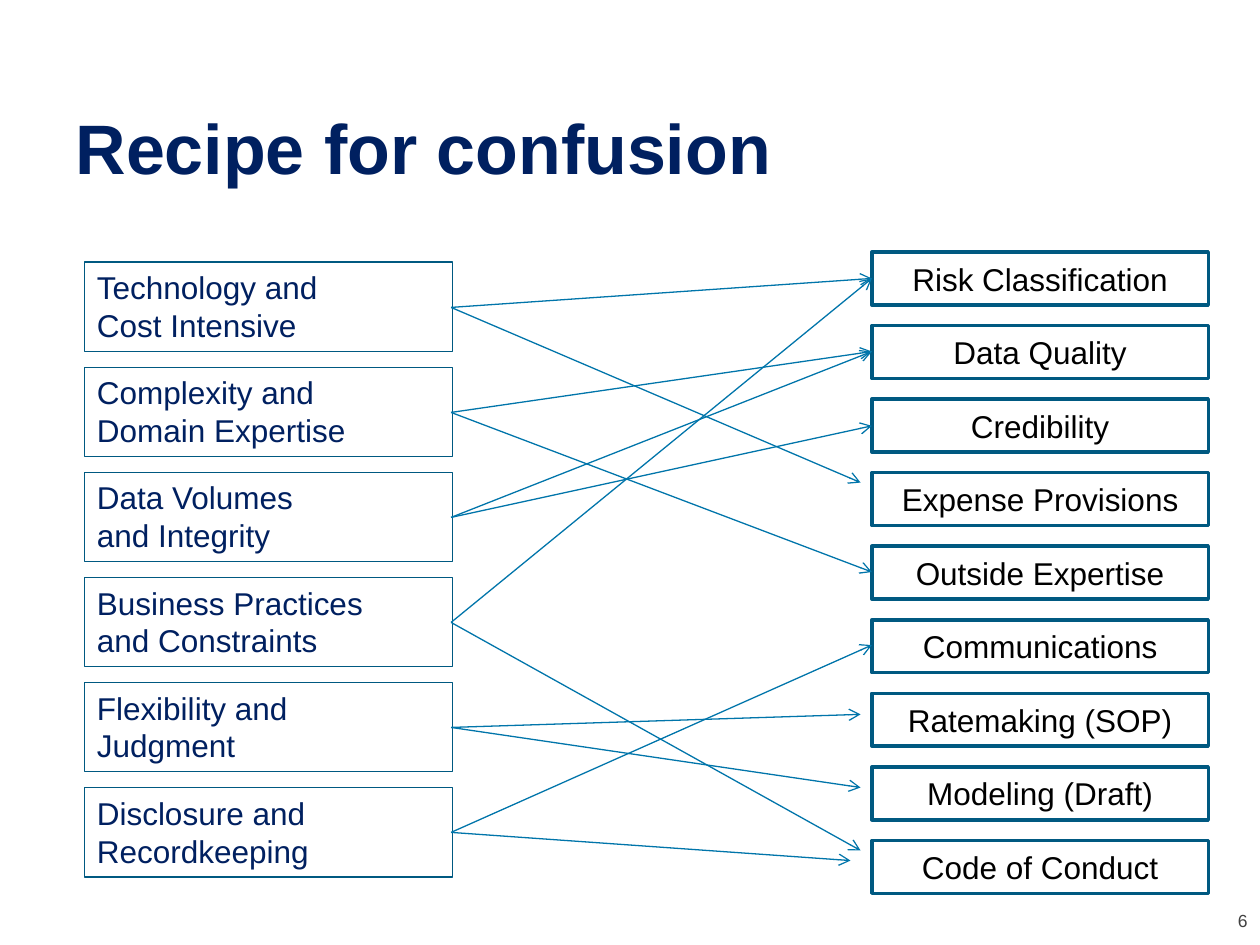
from pptx import Presentation
from pptx.dml.color import RGBColor
from pptx.enum.shapes import MSO_CONNECTOR as Conn, MSO_SHAPE as Shape
from pptx.enum.text import MSO_ANCHOR as Anchor, PP_ALIGN as Align
from pptx.oxml.ns import qn
from pptx.util import Inches, Pt
from lxml import etree


def color(code):
    return RGBColor.from_string(code)


def write(frame, text, size, ink, align, anchor, bold=False):
    frame.word_wrap = True
    frame.vertical_anchor = anchor
    frame.text = text
    for para in frame.paragraphs:
        para.alignment = align
        font = para.font
        font.name, font.size, font.bold = "Arial", Pt(size), bold
        font.color.rgb = color(ink)


prs = Presentation()
prs.slide_width, prs.slide_height = Inches(10), Inches(7.5)
slide = prs.slides.add_slide(prs.slide_layouts[5])
shapes = slide.shapes

title = shapes.title
title.left, title.top = Inches(0.5), Inches(0.75)
title.width, title.height = Inches(9), Inches(0.83)
write(title.text_frame, "Recipe for confusion", 40, "002060",
      Align.LEFT, Anchor.MIDDLE, True)

number = shapes.add_textbox(Inches(7.67), Inches(7.11), Inches(2.33), Inches(0.4))
write(number.text_frame, "6", 10, "404040", Align.RIGHT, Anchor.MIDDLE)

issues = ["Technology and\vCost Intensive", "Complexity and\vDomain Expertise",
          "Data Volumes\nand Integrity", "Business Practices\vand Constraints",
          "Flexibility and\vJudgment", "Disclosure and Recordkeeping"]
topics = ["Risk Classification", "Data Quality", "Credibility",
          "Expense Provisions", "Outside Expertise", "Communications",
          "Ratemaking (SOP)", "Modeling (Draft)", "Code of Conduct"]

# labels, left, top, last top, width, height, line width, fill, ink, align, anchor
columns = [
    (topics, 6.92, 2, 6.67, 2.67, 0.42, 2, "FFFFFF", "000000",
     Align.CENTER, Anchor.MIDDLE),
    (issues, 0.67, 2.08, 6.25, 2.92, 0.71, 0.75, None, "002060",
     Align.LEFT, Anchor.TOP),
]
for labels, left, top, last, width, height, line, fill, ink, align, anchor in columns:
    step = (last - top) / (len(labels) - 1)
    for row, label in enumerate(labels):
        box = shapes.add_shape(Shape.RECTANGLE, Inches(left), Inches(top + row * step),
                               Inches(width), Inches(height))
        box.shadow.inherit = False
        if fill:
            box.fill.solid()
            box.fill.fore_color.rgb = color(fill)
        else:
            box.fill.background()
        box.line.color.rgb = color("005981")
        box.line.width = Pt(line)
        write(box.text_frame, label, 18, ink, align, anchor)

# Arrow tips for each issue, top to bottom
tips = [
    [(6.83, 3.83), (6.92, 2.21)],
    [(6.92, 2.79), (6.92, 4.54)],
    [(6.92, 2.79), (6.92, 3.38)],
    [(6.83, 6.75), (6.92, 2.21)],
    [(6.83, 5.67), (6.83, 6.25)],
    [(6.92, 5.12), (6.75, 6.83)],
]
for row, ends in enumerate(tips):
    start = 2.44 + row * 2.5 / 3
    for x, y in ends:
        arrow = shapes.add_connector(Conn.STRAIGHT, Inches(3.58), Inches(start),
                                     Inches(x), Inches(y))
        arrow.line.color.rgb = color("0075AA")
        arrow.line.width = Pt(0.75)
        etree.SubElement(arrow.line._get_or_add_ln(), qn("a:tailEnd"), type="arrow")
        etree.SubElement(arrow._element.spPr, qn("a:effectLst"))

prs.save("out.pptx")
